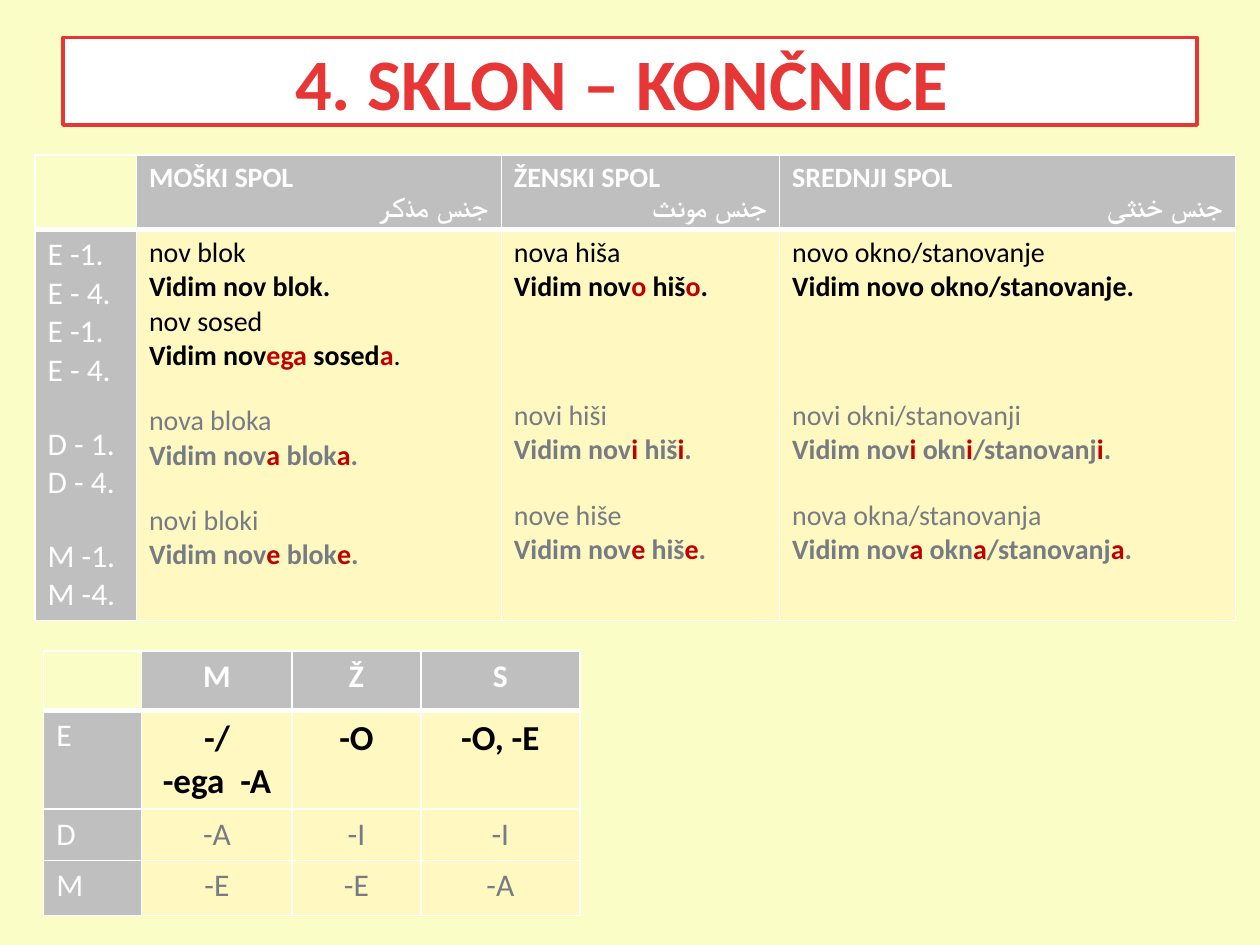
"""Build a slide on Slovene accusative endings with two tables."""
from lxml.etree import SubElement
from pptx import Presentation
from pptx.dml.color import RGBColor
from pptx.enum.text import MSO_ANCHOR, MSO_AUTO_SIZE, PP_ALIGN
from pptx.oxml.ns import qn
from pptx.util import Pt

LEFT, MID, RIGHT = PP_ALIGN.LEFT, PP_ALIGN.CENTER, PP_ALIGN.RIGHT
MIDDLE, FIXED = MSO_ANCHOR.MIDDLE, MSO_AUTO_SIZE.NONE
FONT = "Calibri"
HEX = {
    "page": "FAFEC6", "head": "BFBFBF", "body": "FFF8C1", "white": "FFFFFF",
    "title": "E63636", "black": "000000", "grey": "777C84", "red": "C00000",
}
TITLE = "4. SKLON – KONČNICE "

# A cell is a list of groups: blank lines above, size, colour, lines.
# In a line, *...* is bold and |...| is red.
GENDERS = [
    ("MOŠKI SPOL", "جنس مذکر"),
    ("ŽENSKI SPOL", "جنس مونث"),
    ("SREDNJI SPOL", "جنس خنثی"),
]
LABELS = [
    (0, 18, "white", ["E -1.", "E - 4.", "E -1.", "E - 4."]),
    (1, 18, "white", ["D - 1.", "D - 4."]),
    (1, 18, "white", ["M -1.", "M -4."]),
]
MALE = [
    (0, 16, "black", ["nov blok", "*Vidim nov blok.*", "nov sosed",
                      "*Vidim nov|ega| sosed|a|*."]),
    (1, 16, "grey", ["nova bloka", "*Vidim nov|a| blok|a|.*"]),
    (1, 16, "grey", ["novi bloki", "*Vidim nov|e| blok|e|.*"]),
]
FEMALE = [
    (0, 16, "black", ["nova hiša", "*Vidim nov|o| hiš|o|.*"]),
    (3, 16, "grey", ["novi hiši", "*Vidim nov|i |hiš|i|.*"]),
    (1, 16, "grey", ["nove hiše", "*Vidim nov|e| hiš|e|.*"]),
]
NEUTER = [
    (0, 16, "black", ["novo okno/stanovanje", "*Vidim novo okno/stanovanje.*"]),
    (3, 16, "grey", ["novi okni/stanovanji", "*Vidim nov|i |okn|i|/stanovanj|i|.*"]),
    (1, 16, "grey", ["nova okna/stanovanja", "*Vidim nov|a| okn|a|/stanovanj|a|.*"]),
]
ENDINGS = [
    ("E", 20, "black", [["*-/*", "*-ega  -A*"], ["*-O*"], ["*-O, -E*"]]),
    ("D", 18, "grey", [["-A"], ["-I"], ["-I"]]),
    ("M", 18, "grey", [["-E"], ["-E"], ["-A"]]),
]

FORMS = {
    "at": (20, 88.5), "cols": [58, 208.5, 159, 260.5], "rows": [41, 204.5],
    "align": LEFT,
    "cells": [
        [[]] + [[(0, 16, "white", [f"*{name}*", f"*{gloss}*"])]
                for name, gloss in GENDERS],
        [LABELS, MALE, FEMALE, NEUTER],
    ],
}
SUMS = {
    "at": (25, 372), "cols": [56, 86, 73.5, 91], "rows": [34, 29.5, 29.5, 31.5],
    "align": MID,
    "cells": [
        [[]] + [[(0, 18, "white", [f"*{name}*"])] for name in "MŽS"],
    ] + [
        [[(0, 18, "white", [label])]]
        + [[(0, size, tint, lines)] for lines in cells]
        for label, size, tint, cells in ENDINGS
    ],
}


def color(name):
    return RGBColor.from_string(HEX[name])


def style(run, size, tint, bold):
    font = run.font
    font.name, font.size, font.bold = FONT, Pt(size), bold
    font.color.rgb = color(tint)


def write(para, line, size, tint):
    for i, chunk in enumerate(line.split("*")):
        for j, text in enumerate(chunk.split("|")):
            if text:
                run = para.add_run()
                run.text = text
                style(run, size, "red" if j % 2 else tint, i % 2 == 1)


def fill_text(frame, groups, align):
    fresh = True
    for gap, size, tint, lines in groups:
        for i, line in enumerate(lines):
            para = frame.paragraphs[0] if fresh else frame.add_paragraph()
            fresh = False
            para.alignment = align
            if gap and i == 0:
                para.space_before = Pt(round(gap * size * 1.12, 1))
            if any("\u0600" <= mark <= "ۿ" for mark in line):
                para.alignment = RIGHT
                para._p.get_or_add_pPr().set("rtl", "1")
            write(para, line, size, tint)


def edge(cell, row):
    props = cell._tc.get_or_add_tcPr()
    widths = {"L": 0.96, "R": 0.96, "T": 3 if row == 1 else 0.96,
              "B": 3 if row == 0 else 0.96}
    for side, width in widths.items():
        line = SubElement(props, qn(f"a:ln{side}"), w=str(Pt(width)))
        paint = SubElement(line, qn("a:solidFill"))
        SubElement(paint, qn("a:srgbClr"), val=HEX["white"])


def add_grid(slide, spec):
    cols, rows = spec["cols"], spec["rows"]
    box = [Pt(v) for v in (*spec["at"], sum(cols), sum(rows))]
    table = slide.shapes.add_table(len(rows), len(cols), *box).table
    for col, width in zip(table.columns, cols):
        col.width = Pt(width)
    for r, (row, height) in enumerate(zip(table.rows, rows)):
        row.height = Pt(height)
        for c, groups in enumerate(spec["cells"][r]):
            cell = table.cell(r, c)
            edge(cell, r)
            back = "page" if r == c == 0 else "body" if r and c else "head"
            cell.fill.solid()
            cell.fill.fore_color.rgb = color(back)
            fill_text(cell.text_frame, groups, spec["align"] if c else LEFT)


def add_title(slide):
    title = slide.shapes.title
    title.left, title.top, title.width, title.height = (
        Pt(v) for v in (36, 21.5, 648, 50))
    title.fill.solid()
    title.fill.fore_color.rgb = color("white")
    title.line.color.rgb = color("title")
    title.line.width = Pt(2)
    frame = title.text_frame
    frame.text = TITLE
    frame.auto_size, frame.vertical_anchor = FIXED, MIDDLE
    para = frame.paragraphs[0]
    para.alignment = MID
    style(para.runs[0], 41.4, "title", True)


def main():
    deck = Presentation()
    deck.slide_width, deck.slide_height = Pt(720), Pt(540)
    slide = deck.slides.add_slide(deck.slide_layouts[5])
    slide.background.fill.solid()
    slide.background.fill.fore_color.rgb = color("page")
    add_title(slide)
    for spec in (FORMS, SUMS):
        add_grid(slide, spec)
    deck.save("out.pptx")


if __name__ == "__main__":
    main()
